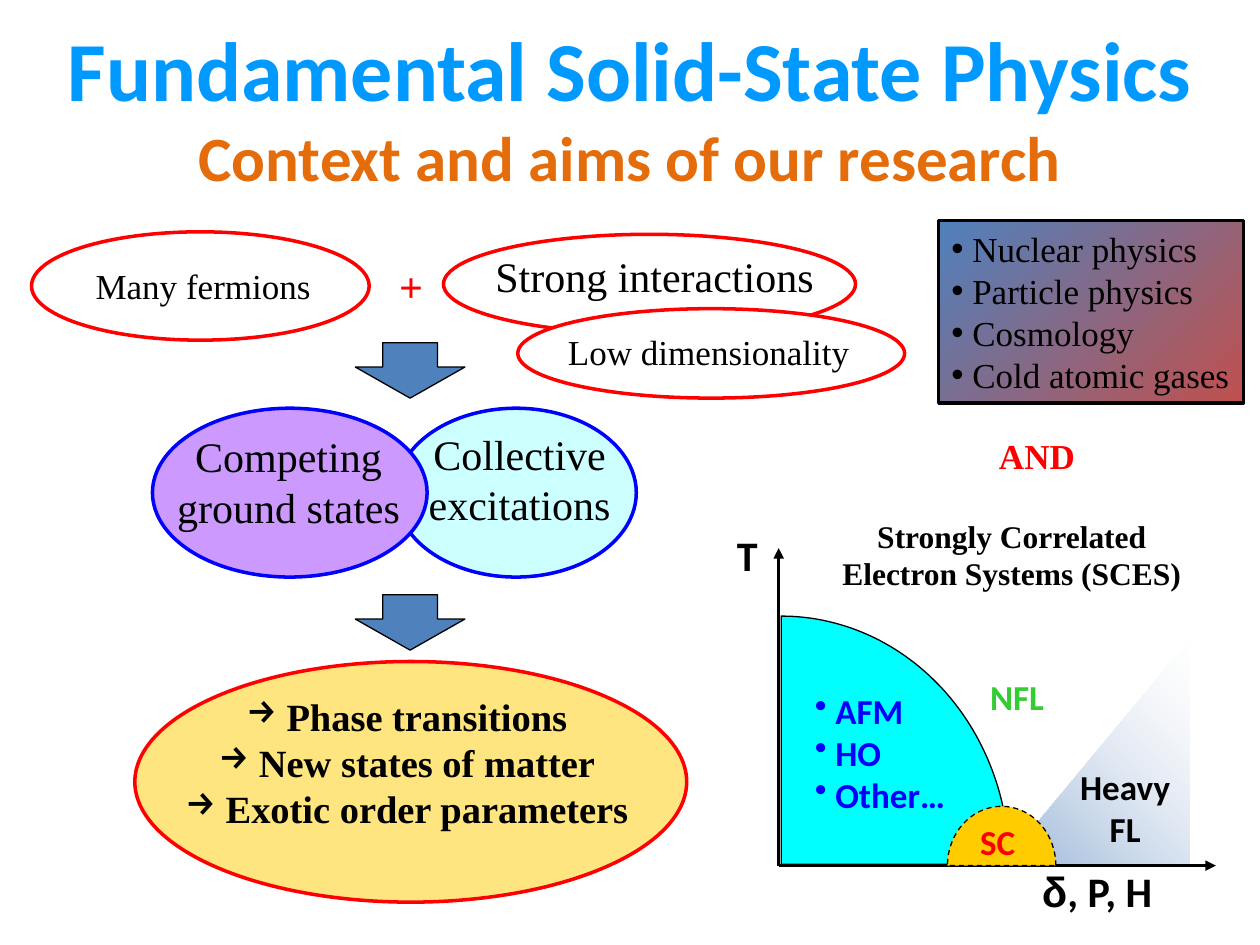
from math import cos, pi, sin

from lxml.etree import SubElement
from pptx import Presentation
from pptx.dml.color import RGBColor
from pptx.enum.dml import MSO_LINE
from pptx.enum.shapes import MSO_CONNECTOR, MSO_SHAPE
from pptx.enum.text import MSO_ANCHOR, MSO_AUTO_SIZE, PP_ALIGN
from pptx.oxml import parse_xml
from pptx.oxml.ns import nsdecls, qn
from pptx.util import Inches, Pt

COLS, ROWS = 100, 75
WIDE, HIGH = Inches(10), Inches(7.5)
HUES = {
    "black": "000000", "white": "FFFFFF", "red": "FF0000", "blue": "0000FF",
    "sky": "0099FF", "rust": "E46C0A", "steel": "4F81BD", "brick": "C0504D",
    "ice": "CCFFFF", "lilac": "CC99FF", "gold": "FFCC00", "cyan": "00FFFF",
    "green": "33CC33", "mist": "D0D8E8",
}
SERIF, SANS = "Times New Roman", "Calibri"
LEFT, MID = PP_ALIGN.LEFT, PP_ALIGN.CENTER


def hue(name):
    return RGBColor.from_string(HUES[name])


def spot(col, row):
    return round(WIDE * col / COLS), round(HIGH * row / ROWS)


def area(col, row, cols, rows):
    return *spot(col, row), *spot(cols, rows)


def style(para, size, font, color, bold):
    for run in para.runs:
        face = run.font
        face.size, face.name, face.bold = Pt(size), font, bold
        face.color.rgb = hue(color)


def bullet(para, mark):
    props = para._p.get_or_add_pPr()
    props.set("marL", "0")
    props.set("indent", "0")
    SubElement(props, qn("a:buChar")).set("char", mark)


def write(frame, text, size, font=SERIF, color="black", bold=False, align=LEFT, mark=None):
    frame.text = text
    for para in frame.paragraphs:
        para.alignment = align
        para.space_before = Pt(0)
        style(para, size, font, color, bold)
        if mark:
            bullet(para, mark)


def label(slide, place, text, size, wrap=False, **look):
    frame = slide.shapes.add_textbox(*area(*place)).text_frame
    frame.word_wrap = wrap
    write(frame, text, size, **look)
    return frame


def paint(shape, fill=None, line=None, width=2):
    if fill:
        shape.fill.solid()
        shape.fill.fore_color.rgb = hue(fill)
    else:
        shape.fill.background()
    if line:
        shape.line.color.rgb = hue(line)
        shape.line.width = Pt(width)
    else:
        shape.line.fill.background()
    shape.shadow.inherit = False


def blend(shape, first, last, angle):
    shape.fill.gradient()
    shape.fill.gradient_angle = angle
    for stop, name in zip(shape.fill.gradient_stops, (first, last)):
        stop.color.rgb = hue(name)


def fade(shape, *shares):
    for node, share in zip(shape._element.spPr.iter(qn("a:srgbClr")), shares):
        SubElement(node, qn("a:alpha")).set("val", str(share * 1000))


def oval(slide, place, line, fill=None):
    shape = slide.shapes.add_shape(MSO_SHAPE.OVAL, *area(*place))
    paint(shape, fill, line)
    return shape


def arrow(slide, place):
    shape = slide.shapes.add_shape(MSO_SHAPE.DOWN_ARROW, *area(*place))
    shape.adjustments[0], shape.adjustments[1] = 0.5, 0.56
    paint(shape, "steel", "black", 0.75)


def outline(slide, points, fill=None, line=None):
    spots = [spot(*point) for point in points]
    build = slide.shapes.build_freeform(*spots[0])
    build.add_line_segments(spots[1:], close=True)
    shape = build.convert_to_shape()
    paint(shape, fill, line, 0.75)
    return shape


def dome(slide, hub, radii, sweep, fill):
    steps = 60
    arc = [(hub[0] + radii[0] * cos(sweep * i / steps),
            hub[1] - radii[1] * sin(sweep * i / steps)) for i in range(steps + 1)]
    return outline(slide, arc + [hub], fill, "black")


def axis(slide, start, end):
    line = slide.shapes.add_connector(MSO_CONNECTOR.STRAIGHT, *spot(*start), *spot(*end))
    line.line.color.rgb = hue("black")
    line.line.width = Pt(2)
    SubElement(line.line._get_or_add_ln(), qn("a:tailEnd")).set("type", "triangle")
    SubElement(line._element.spPr, qn("a:effectLst"))


def shade(run):
    run._r.rPr.find(qn("a:solidFill")).addnext(parse_xml(
        f'<a:effectLst {nsdecls("a")}><a:outerShdw blurRad="38100" dist="38100" '
        'dir="2700000" algn="tl"><a:srgbClr val="000000"><a:alpha val="43000"/>'
        '</a:srgbClr></a:outerShdw></a:effectLst>'))


def settle(shape, place, anchor):
    shape.left, shape.top, shape.width, shape.height = area(*place)
    frame = shape.text_frame
    frame.auto_size = MSO_AUTO_SIZE.NONE
    frame.vertical_anchor = anchor
    return frame


def heading(slide):
    frame = settle(slide.shapes.title, (2.2, 0.9, 95.6, 15.1), MSO_ANCHOR.TOP)
    write(frame, "Fundamental Solid-State Physics\nContext and aims of our research",
          48, SANS, "sky", True, MID)
    style(frame.paragraphs[1], 36, SANS, "rust", True)
    for para in frame.paragraphs:
        shade(para.runs[0])


def fields(slide):
    body = slide.placeholders[1]
    frame = settle(body, (74.5, 17.5, 24.2, 14.5), MSO_ANCHOR.MIDDLE)
    frame.word_wrap = False
    write(frame, " Nuclear physics\n Particle physics\n Cosmology\n Cold atomic gases",
          20, mark="•")
    blend(body, "steel", "brick", 315)
    body.line.color.rgb = hue("black")
    body.line.width = Pt(2)
    label(slide, (78.3, 34, 8.2, 4.4), "AND", 20, color="red", bold=True)


def flow(slide):
    oval(slide, (31.4, 32.4, 19.1, 13.4), "blue", "ice")
    label(slide, (32.6, 33.5, 17.3, 9.1), "Collective excitations", 24, True, align=MID)
    fade(oval(slide, (10.7, 52.5, 43.8, 19.1), "red", "gold"), 50)
    label(slide, (7.9, 54.5, 48.8, 12.4),
          " Phase transitions\n New states of matter\n Exotic order parameters",
          22, True, bold=True, align=MID, mark="→")
    oval(slide, (2.5, 18.4, 26.8, 8.6), "red")
    label(slide, (6.6, 20.5, 19.2, 4.4), "Many fermions", 20)
    label(slide, (30.7, 20.2, 3.9, 5), "+", 24, color="red", bold=True)
    oval(slide, (35.2, 18.6, 32.7, 7.9), "red")
    label(slide, (38.2, 19.4, 27.5, 5.1), "Strong interactions", 24, align=MID)
    oval(slide, (41.1, 24.5, 30.7, 7.1), "red", "white")
    label(slide, (44.1, 25.7, 24.6, 4.4), "Low dimensionality", 20)
    oval(slide, (12.1, 32.4, 21.8, 13.4), "blue", "lilac")
    label(slide, (11.9, 33.7, 22, 9.1), "Competing ground states", 24, True, align=MID)
    for row in (27.2, 47.2):
        arrow(slide, (28.2, row, 8.7, 4.4))


def phases(slide):
    base, edge = 68.7, 61.8
    wedge = outline(slide, [(79.4, base), (94.4, base), (94.4, 50.6)])
    blend(wedge, "mist", "steel", 225)
    fade(wedge, 0, 60)
    axis(slide, (edge, base), (edge, 43.5))
    axis(slide, (edge, base), (96.5, base))
    dome(slide, (62, 68.6), (18.1, 19.7), pi / 2, "cyan")
    dome(slide, (79.5, base), (4.3, 4.7), pi, "gold").line.dash_style = MSO_LINE.DASH
    bold = {"font": SANS, "bold": True}
    label(slide, (76.8, 64.6, 4.8, 4.3), "SC", 20, color="red", **bold)
    label(slide, (63.7, 54.2, 12.7, 11), " AFM\n HO\n Other…", 20,
          color="blue", mark="•", **bold)
    label(slide, (77.6, 53.1, 6.3, 4.3), "NFL", 20, color="green", **bold)
    label(slide, (84.7, 60.3, 9.2, 7.7), "Heavy\nFL", 20, align=MID, **bold)
    label(slide, (65.4, 40.5, 29.8, 7.1), "Strongly Correlated\nElectron Systems (SCES)",
          18, bold=True, align=MID)
    label(slide, (57.5, 41.5, 3.6, 5), "T", 24, **bold)
    para = label(slide, (81.7, 68.2, 10.8, 5), "δ", 24, **bold).paragraphs[0]
    para.add_run().text = ", P, H"
    style(para, 24, SANS, "black", True)
    para.runs[0].font.name = "Arial"


def main():
    deck = Presentation()
    deck.slide_width, deck.slide_height = WIDE, HIGH
    slide = deck.slides.add_slide(deck.slide_layouts[1])
    heading(slide)
    flow(slide)
    phases(slide)
    fields(slide)
    deck.save("out.pptx")


if __name__ == "__main__":
    main()
